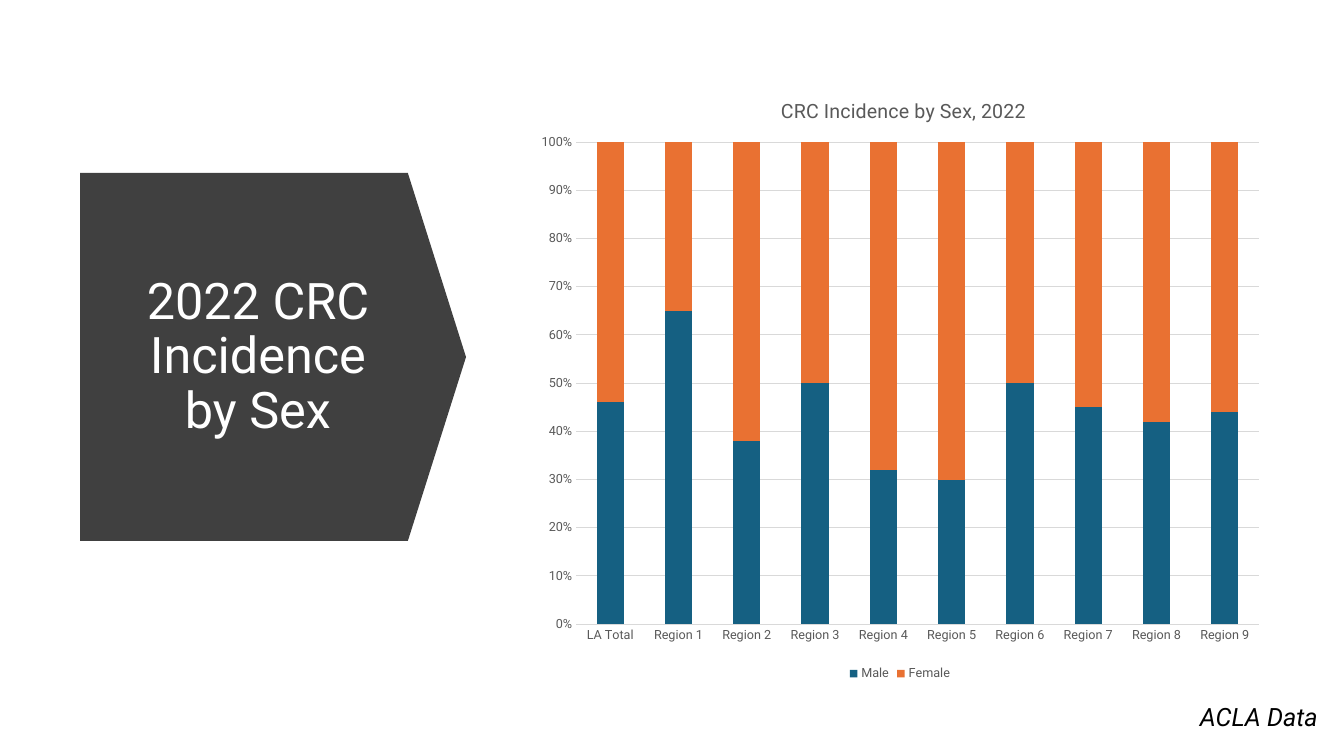
import dataclasses

import lxml.etree
import pptx
import pptx.chart.data
import pptx.dml.color
import pptx.enum.chart
import pptx.enum.shapes
import pptx.enum.text
import pptx.oxml.ns
import pptx.util

PX = 914400 / 100.8
SHARES = {
    "LA Total": (46, 54), "Region 1": (65, 35), "Region 2": (38, 62),
    "Region 3": (50, 50), "Region 4": (32, 68), "Region 5": (30, 70),
    "Region 6": (50, 50), "Region 7": (45, 55), "Region 8": (42, 58),
    "Region 9": (44, 56),
}


@dataclasses.dataclass(frozen=True)
class Theme:
    """Colours, font and type sizes of the slide."""
    font: str = "Roboto"
    dark: str = "404040"
    white: str = "FFFFFF"
    black: str = "000000"
    grey: str = "595959"
    grid: str = "D9D9D9"
    male: str = "156082"
    female: str = "E97132"
    head: int = 36
    note: int = 18
    title: int = 14
    label: int = 9


THEME = Theme()


def emu(px):
    """Turn px into EMU."""
    return pptx.util.Emu(round(px * PX))


def box(*px):
    """Turn left, top, width and height into EMU."""
    return [emu(n) for n in px]


def rgb(code):
    """Make a colour from its hex code."""
    return pptx.dml.color.RGBColor.from_string(code)


def style(font, size, color, italic=False):
    """Set the face, size and colour of a font."""
    font.name = THEME.font
    font.size = pptx.util.Pt(size)
    font.color.rgb = rgb(color)
    font.bold = False
    font.italic = italic


def write(frame, text, size, color, italic=False):
    """Add one styled run to the first paragraph of a frame."""
    para = frame.paragraphs[0]
    run = para.add_run()
    run.text = text
    style(run.font, size, color, italic)
    return para


def add_arrow(slide):
    """Draw the dark block that points at the chart."""
    kind = pptx.enum.shapes.MSO_SHAPE.DOWN_ARROW
    arrow = slide.shapes.add_shape(kind, *box(89, 164, 368, 386))
    arrow.rotation = 270
    arrow.adjustments[0] = 1
    arrow.adjustments[1] = 0.158
    arrow.shadow.inherit = False
    arrow.fill.solid()
    arrow.fill.fore_color.rgb = rgb(THEME.dark)
    arrow.line.fill.background()
    return arrow


def set_title(slide, arrow, text):
    """Place the title in front of the arrow."""
    title = slide.shapes.title
    arrow._element.addnext(title._element)
    title.left, title.top, title.width, title.height = box(113, 217, 290, 281)
    frame = title.text_frame
    frame.word_wrap = True
    frame.vertical_anchor = pptx.enum.text.MSO_ANCHOR.MIDDLE
    para = write(frame, text, THEME.head, THEME.white)
    para.alignment = pptx.enum.text.PP_ALIGN.CENTER
    para.line_spacing = 0.9


def set_layout(part, index, **values):
    """Fix the place of a chart part by fractions of the chart."""
    name = pptx.oxml.ns.qn
    for old in part.findall(name("c:layout")):
        part.remove(old)
    layout = lxml.etree.Element(name("c:layout"))
    manual = lxml.etree.SubElement(layout, name("c:manualLayout"))
    for key, value in values.items():
        lxml.etree.SubElement(manual, name("c:" + key), val=str(value))
    part.insert(index, layout)


def set_axis(axis, line):
    """Format the labels and the line of an axis."""
    none = pptx.enum.chart.XL_TICK_MARK.NONE
    axis.major_tick_mark = axis.minor_tick_mark = none
    style(axis.tick_labels.font, THEME.label, THEME.grey)
    if line:
        set_line(axis.format.line)
    else:
        axis.format.line.fill.background()


def set_line(line):
    """Give a line the grid colour and weight."""
    line.color.rgb = rgb(THEME.grid)
    line.width = pptx.util.Pt(0.75)


def add_chart(slide):
    """Add the stacked share of each sex by region."""
    data = pptx.chart.data.CategoryChartData()
    data.categories = list(SHARES)
    for name, vals in zip(("Male", "Female"), zip(*SHARES.values())):
        data.add_series(name, vals)
    kind = pptx.enum.chart.XL_CHART_TYPE.COLUMN_STACKED_100
    chart = slide.shapes.add_chart(kind, *box(526, 71, 748, 614), data).chart
    style(chart.font, 10, THEME.black)

    write(chart.chart_title.text_frame, "CRC Incidence by Sex, 2022",
          THEME.title, THEME.grey)
    chart.chart_title.include_in_layout = False
    set_layout(chart.chart_title._element, 1,
               xMode="edge", yMode="edge", x=0.336, y=0.037)

    plot = chart.plots[0]
    plot.gap_width = 150
    plot.overlap = 100
    plot.vary_by_categories = False
    for series, color in zip(plot.series, (THEME.male, THEME.female)):
        series.format.fill.solid()
        series.format.fill.fore_color.rgb = rgb(color)
    set_layout(plot._element.getparent(), 0, layoutTarget="inner",
               xMode="edge", yMode="edge", x=0.067, y=0.116, w=0.913, h=0.785)

    set_axis(chart.category_axis, True)
    values = chart.value_axis
    set_axis(values, False)
    values.minimum_scale, values.maximum_scale = 0, 1
    values.major_unit = 0.1
    values.tick_labels.number_format = "0%"
    values.tick_labels.number_format_is_linked = False
    values.has_major_gridlines = True
    set_line(values.major_gridlines.format.line)

    chart.has_legend = True
    chart.legend.position = pptx.enum.chart.XL_LEGEND_POSITION.BOTTOM
    chart.legend.include_in_layout = False
    style(chart.legend.font, THEME.label, THEME.grey)


def add_note(slide, text):
    """Add the source note in the lower corner."""
    frame = slide.shapes.add_textbox(*box(1190, 696, 164, 40)).text_frame
    frame.word_wrap = True
    frame.auto_size = pptx.enum.text.MSO_AUTO_SIZE.SHAPE_TO_FIT_TEXT
    write(frame, text, THEME.note, THEME.black, True)


def main():
    """Build and save the slide."""
    deck = pptx.Presentation()
    deck.slide_width, deck.slide_height = emu(1344), emu(756)
    slide = deck.slides.add_slide(deck.slide_layouts[5])
    arrow = add_arrow(slide)
    set_title(slide, arrow, "2022 CRC Incidence by Sex")
    add_chart(slide)
    add_note(slide, "ACLA Data")
    deck.save("out.pptx")


if __name__ == "__main__":
    main()
